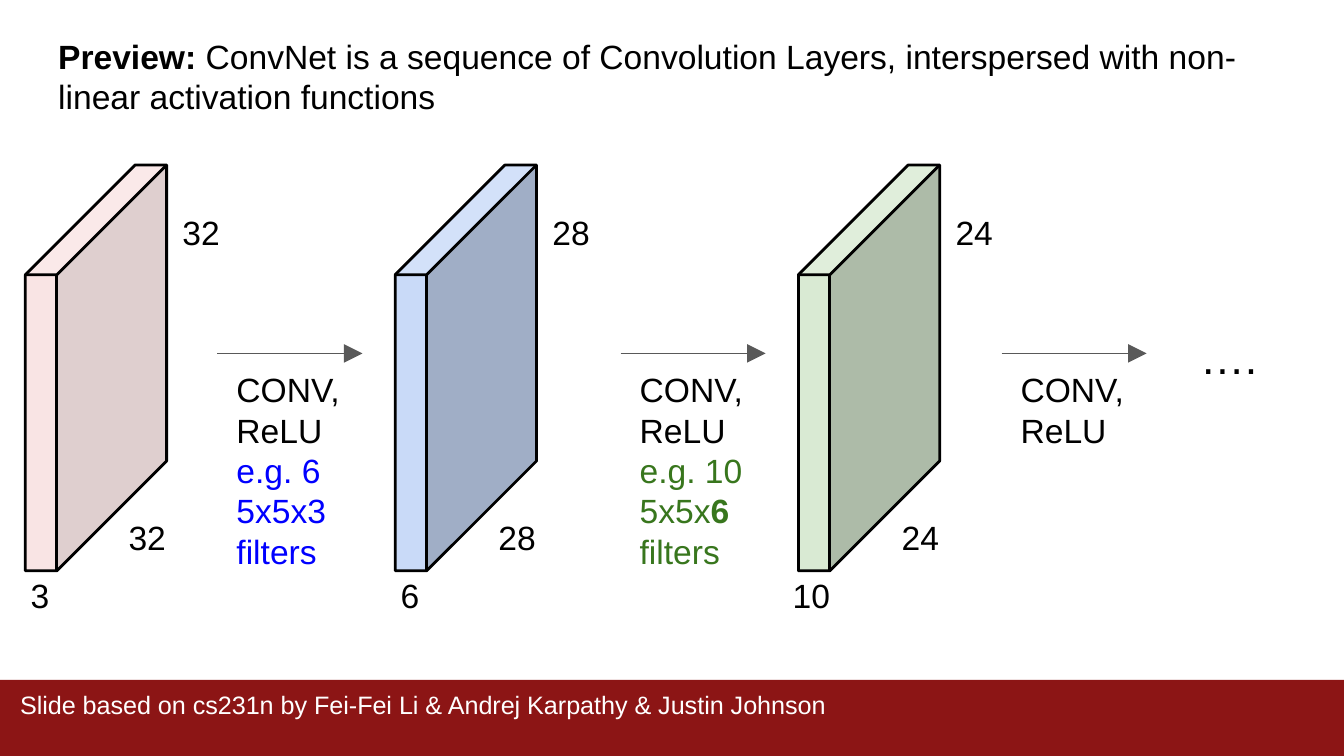
import pptx
import pptx.util
import pptx.dml.color
import pptx.enum.shapes
import pptx.oxml
import pptx.oxml.ns
import lxml.etree

Cm = pptx.util.Cm
Pt = pptx.util.Pt
RGBColor = pptx.dml.color.RGBColor
MSO_SHAPE = pptx.enum.shapes.MSO_SHAPE
qn = pptx.oxml.ns.qn

BLACK = RGBColor(0x00, 0x00, 0x00)
WHITE = RGBColor(0xFF, 0xFF, 0xFF)
CARDINAL = RGBColor(0x8C, 0x15, 0x15)
GRAY = RGBColor(0x59, 0x59, 0x59)
PINK = RGBColor(0xF4, 0xCC, 0xCC)
LIGHT_BLUE = RGBColor(0xC9, 0xDA, 0xF8)
LIGHT_GREEN = RGBColor(0xD9, 0xEA, 0xD3)
BLUE = RGBColor(0x00, 0x00, 0xFF)
GREEN = RGBColor(0x38, 0x76, 0x1D)


def add_text(s, box, paragraphs, size=18, inset=0.25):
    tf = s.shapes.add_textbox(*map(Cm, box)).text_frame
    tf.word_wrap = True
    tf.margin_left = tf.margin_right = Cm(inset)
    tf.margin_top = tf.margin_bottom = Cm(inset)
    for i, runs in enumerate(paragraphs):
        p = tf.add_paragraph() if i else tf.paragraphs[0]
        for text, color, bold in runs:
            r = p.add_run()
            r.text = text
            r.font.name = "Arial"
            r.font.size = Pt(size)
            r.font.bold = bold
            r.font.color.rgb = color


def add_footer(s, box):
    left, top, width, height = box
    bar = s.shapes.add_shape(MSO_SHAPE.RECTANGLE, *map(Cm, box))
    bar.shadow.inherit = False
    bar.fill.solid()
    bar.fill.fore_color.rgb = CARDINAL
    bar.line.fill.background()
    credit = "Slide based on cs231n by Fei-Fei Li & Andrej Karpathy & Justin Johnson"
    add_text(s, (left + 0.2, top, width - 0.5, height),
             [[(credit, WHITE, False)]], 13.5, 0.18)


def add_title(s, box):
    add_text(s, box, [[
        ("Preview: ", BLACK, True),
        ("ConvNet is a sequence of Convolution Layers, interspersed with "
         "non-linear activation functions", BLACK, False)]])


def add_volume(s, box, color, side, depth, depth_dx, opacity=None):
    left, top, width, height = box
    cube = s.shapes.add_shape(MSO_SHAPE.CUBE, *map(Cm, box))
    cube.adjustments[0] = 0.777
    cube.shadow.inherit = False
    cube.fill.solid()
    cube.fill.fore_color.rgb = color
    cube.line.color.rgb = BLACK
    cube.line.width = Pt(1.5)
    if opacity:
        srgb = cube.fill._xPr.find(".//" + qn("a:srgbClr"))
        lxml.etree.SubElement(srgb, qn("a:alpha")).set("val", str(opacity * 1000))
    labels = [(side, width - 0.97, height - 1.27),
              (side, width + 0.05, 0.64),
              (depth, depth_dx, height - 0.18)]
    for label, dx, dy in labels:
        add_text(s, (left + dx, top + dy, 1.37, 0.8), [[(label, BLACK, False)]])


def add_step(s, box, filters=()):
    left, top, width, height = box
    arrow = s.shapes.add_connector(
        pptx.enum.shapes.MSO_CONNECTOR.STRAIGHT,
        Cm(left), Cm(top), Cm(left + width), Cm(top))
    arrow.line.color.rgb = GRAY
    arrow.line.width = Pt(0.75)
    ln = arrow.line._get_or_add_ln()
    tail = lxml.etree.SubElement(ln, qn("a:tailEnd"))
    for key, value in (("type", "triangle"), ("w", "lg"), ("len", "lg")):
        tail.set(key, value)
    lxml.etree.SubElement(arrow._element.spPr, qn("a:effectLst"))
    paragraphs = [[("CONV,", BLACK, False)], [("ReLU", BLACK, False)]]
    if filters:
        paragraphs.append(filters)
    add_text(s, (left + 0.11, top + 0.05, width + 0.2, height), paragraphs)


def main():
    prs = pptx.Presentation()
    prs.slide_width = Cm(25.4)
    prs.slide_height = Cm(14.29)
    s = prs.slides.add_slide(prs.slide_layouts[6])

    add_footer(s, (0, 12.85, 25.4, 1.47))
    add_title(s, (0.85, 0.43, 23.75, 2.74))

    volumes = [(0.48, PINK, "32", "3", -0.15, 52),
               (7.47, LIGHT_BLUE, "28", "6", -0.15, None),
               (15.09, LIGHT_GREEN, "24", "10", -0.36, None)]
    for left, *details in volumes:
        add_volume(s, (left, 3.12, 2.67, 7.67), *details)

    steps = [(4.11, [("e.g. 6 5x5x3 filters", BLUE, False)]),
             (11.73, [("e.g. 10 5x5x", GREEN, False), ("6 ", GREEN, True),
                      ("filters", GREEN, False)]),
             (18.93, [])]
    for left, filters in steps:
        add_step(s, (left, 6.68, 2.74, 1.09), filters)

    add_text(s, (22.43, 5.99, 2.67, 0.99), [[("….", BLACK, False)]], 24)
    prs.save("out.pptx")


if __name__ == "__main__":
    main()
